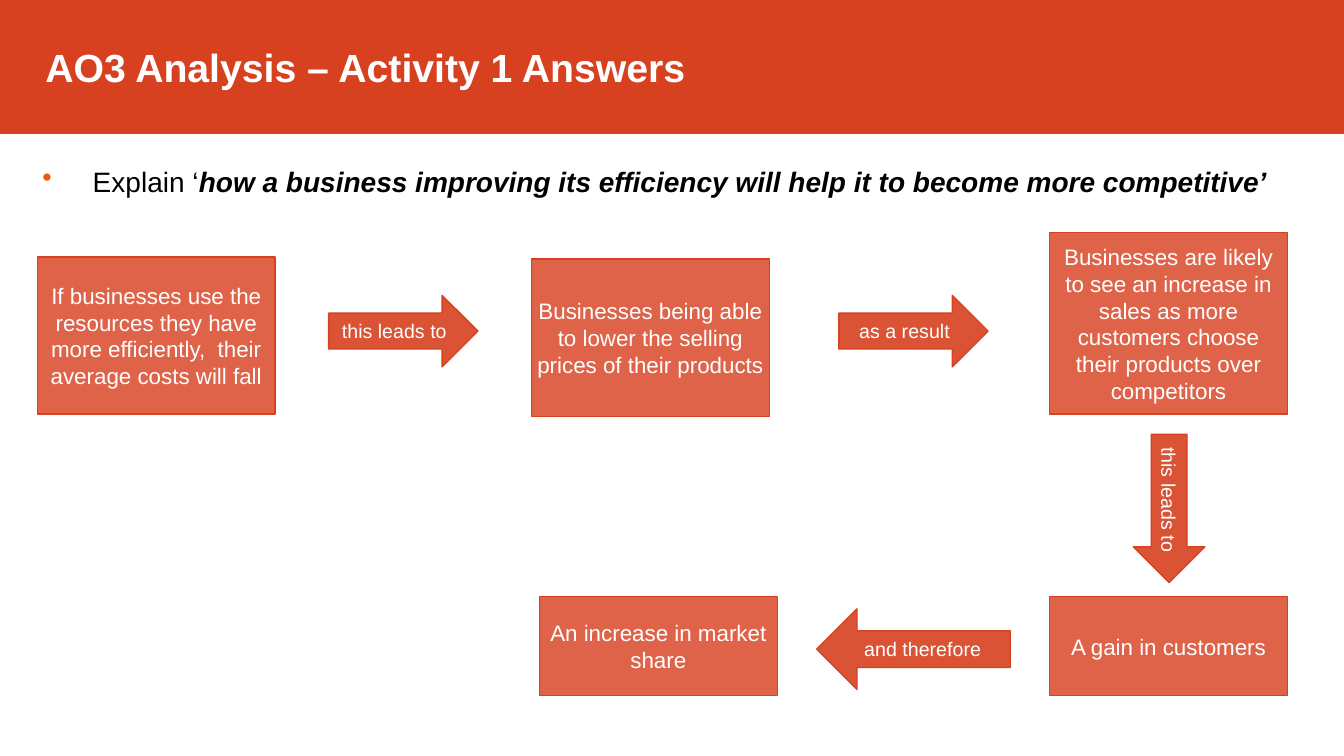
from dataclasses import dataclass

from lxml import etree
from pptx import Presentation
from pptx.dml.color import RGBColor
from pptx.enum import shapes, text
from pptx.oxml import ns
from pptx.util import Inches, Pt


@dataclass(frozen=True)
class Theme:
    """Colours, font and type sizes of the deck."""
    red: str = "D74120"
    orange: str = "EA5B0C"
    white: str = "FFFFFF"
    black: str = "000000"
    font: str = "Arial"
    title: int = 28
    question: int = 20
    step: int = 16
    link: int = 14
    step_opacity: int = 82
    link_opacity: int = 90


THEME = Theme()
KIND = shapes.MSO_SHAPE
STEP_WIDTH = 2.36

STEPS = [
    (0.37, 2.55, 1.56, "If businesses use the resources they have more efficiently,  their average costs will fall"),
    (5.27, 2.57, 1.56, "Businesses being able to lower the selling prices of their products"),
    (10.41, 2.31, 1.8, "Businesses are likely to see an increase in sales as more customers "
                       "choose their products over competitors"),
    (10.41, 5.92, 0.98, "A gain in customers"),
    (5.35, 5.92, 0.98, "An increase in market share"),
]
LINKS = [
    (KIND.RIGHT_ARROW, (3.26, 2.93, 1.48, 0.71), 0.5, 0, "this leads to"),
    (KIND.RIGHT_ARROW, (8.32, 2.93, 1.48, 0.71), 0.5, 0, "as a result"),
    (KIND.RIGHT_ARROW, (10.86, 4.69, 1.47, 0.71), 0.5, 90, "this leads to"),
    (KIND.LEFT_ARROW, (8.1, 6.04, 1.92, 0.8), 0.455, 0, "and therefore"),
]


def style_frame(frame, anchor):
    """Set wrapping, anchor and even insets on a text frame."""
    frame.word_wrap = True
    frame.vertical_anchor = anchor
    frame.margin_left = frame.margin_right = Inches(0.05)
    frame.margin_top = frame.margin_bottom = Inches(0.05)


def style_font(font, size, color):
    """Set the theme font with a size and colour."""
    font.name = THEME.font
    font.size = Pt(size)
    font.color.rgb = RGBColor.from_string(color)


def add_block(page, kind, box, words, size, opacity=100):
    """Draw a red shape with white text in the given box."""
    block = page.shapes.add_shape(kind, *map(Inches, box))
    block.shadow.inherit = False
    block.fill.solid()
    block.fill.fore_color.rgb = RGBColor.from_string(THEME.red)
    block.line.color.rgb = RGBColor.from_string(THEME.red)
    block.line.width = Pt(1)
    if opacity < 100:
        color = block.fill._xPr.find(ns.qn("a:solidFill"))[0]
        etree.SubElement(color, ns.qn("a:alpha"), val=str(opacity * 1000))
    style_frame(block.text_frame, text.MSO_ANCHOR.MIDDLE)
    para = block.text_frame.paragraphs[0]
    para.text = words
    para.alignment = text.PP_ALIGN.CENTER
    style_font(para.font, size, THEME.white)
    return block


def add_title(page, box, words):
    """Draw the title band across the given box."""
    band = add_block(page, KIND.RECTANGLE, box, words, THEME.title)
    band.text_frame.margin_left = Inches(0.45)
    para = band.text_frame.paragraphs[0]
    para.alignment = text.PP_ALIGN.LEFT
    para.font.bold = True


def add_question(page, box, lead, emphasis):
    """Write the bulleted question in the given box."""
    frame = page.shapes.add_textbox(*map(Inches, box)).text_frame
    style_frame(frame, text.MSO_ANCHOR.TOP)
    para = frame.paragraphs[0]
    para.space_before = Pt(12)
    style_font(para.font, THEME.question, THEME.black)
    para.add_run().text = lead
    span = para.add_run()
    span.text = emphasis
    span.font.bold = span.font.italic = True
    props = para._p.get_or_add_pPr()
    props.set("marL", str(Inches(0.5)))
    props.set("indent", str(Inches(-0.5)))
    bullet_color = etree.Element(ns.qn("a:buClr"))
    etree.SubElement(bullet_color, ns.qn("a:srgbClr"), val=THEME.orange)
    bullet = etree.Element(ns.qn("a:buChar"), char="•")
    defaults = props.find(ns.qn("a:defRPr"))
    defaults.addprevious(bullet_color)
    defaults.addprevious(bullet)


def add_chain(page, steps, links):
    """Draw the chain of reasoning: step boxes and labelled arrows."""
    for left, top, height, words in steps:
        add_block(page, KIND.RECTANGLE, (left, top, STEP_WIDTH, height), words,
                  THEME.step, THEME.step_opacity)
    for kind, box, shaft, turn, words in links:
        arrow = add_block(page, kind, box, words, THEME.link, THEME.link_opacity)
        arrow.adjustments[0] = shaft
        arrow.rotation = turn


def main():
    """Build the slide and save the deck."""
    deck = Presentation()
    deck.slide_width, deck.slide_height = Inches(13.33), Inches(7.5)
    page = deck.slides.add_slide(deck.slide_layouts[6])
    add_title(page, (0, 0, 13.33, 1.32), "AO3 Analysis – Activity 1 Answers")
    add_chain(page, STEPS, LINKS)
    add_question(page, (0.37, 1.58, 12.96, 0.9), "Explain ‘",
                 "how a business improving its efficiency will help it to become more competitive’")
    deck.save("out.pptx")


if __name__ == "__main__":
    main()
